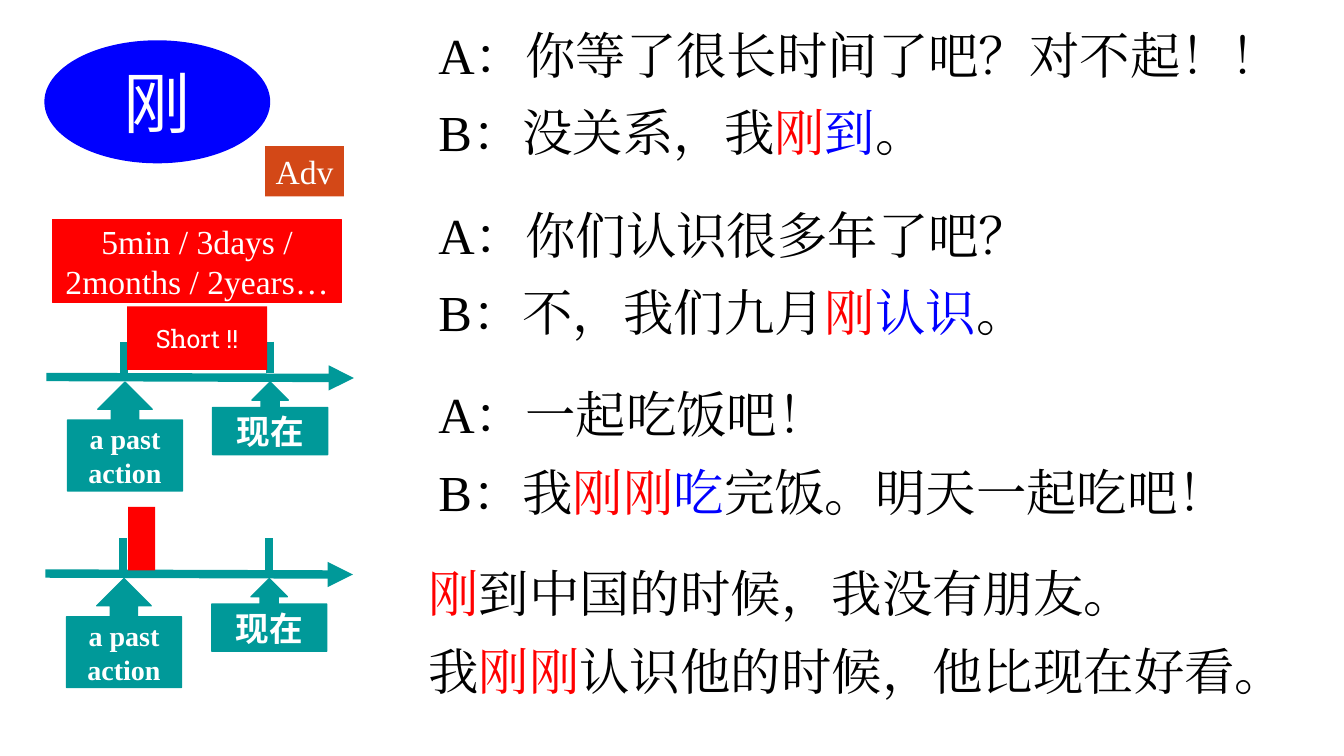
"""Build the grammar slide for the adverb 刚, with its dialogues and timelines."""
import pptx
import pptx.dml.color
import pptx.enum.dml
import pptx.enum.shapes
import pptx.enum.text
import pptx.oxml.ns
import pptx.util
from lxml import etree

Inches = pptx.util.Inches
Pt = pptx.util.Pt
MSO_SHAPE = pptx.enum.shapes.MSO_SHAPE
PP_ALIGN = pptx.enum.text.PP_ALIGN
qn = pptx.oxml.ns.qn

COLORS = {
    "black": "000000",
    "white": "FFFFFF",
    "red": "FF0000",
    "blue": "0000FF",
    "teal": "009999",
    "rust": "D34817",
}
SERIF = "Times New Roman"
HAN = "Noto Sans CJK SC"
SLAB = "Roboto Slab"

DIALOGUES = [
    [("A：你等了很长时间了吧？对不起！！", "black")],
    [("B：没关系，我", "black"), ("刚", "red"), ("到", "blue"), ("。", "black")],
    [("A：你们认识很多年了吧？", "black")],
    [("B：不，我们九月", "black"), ("刚", "red"), ("认识", "blue"), ("。", "black")],
    [("A：一起吃饭吧！", "black")],
    [("B：我", "black"), ("刚刚", "red"), ("吃", "blue"),
     ("完饭。明天一起吃吧！", "black")],
]
EXAMPLES = [
    [("刚", "red"), ("到中国的时候，我没有朋友。", "black")],
    [("我", "black"), ("刚刚", "red"), ("认识他的时候，他比现在好看。", "black")],
]


class GrammarSlide:
    """Hold the slide and its style, and draw each kind of element."""

    def __init__(self, slide):
        self.shapes = slide.shapes

    def color(self, name):
        return pptx.dml.color.RGBColor.from_string(COLORS[name])

    def style_run(self, run, size, font, color, bold=False):
        run.font.size = Pt(size)
        run.font.name = font
        run.font.bold = bold
        run.font.color.rgb = self.color(color)
        east_asian = etree.SubElement(run._r.get_or_add_rPr(), qn("a:ea"))
        east_asian.set("typeface", font)

    def label(self, preset, box, fill, text="", size=24, font=SERIF,
              bold=False, outlined=False):
        label = self.shapes.add_shape(preset, *map(Inches, box))
        label.shadow.inherit = False
        label.fill.solid()
        label.fill.fore_color.rgb = self.color(fill)
        if outlined:
            label.line.color.rgb = self.color(fill)
            label.line.width = Pt(1)
        else:
            label.line.fill.background()
        if text:
            frame = label.text_frame
            frame.text = text
            frame.word_wrap = True
            frame.vertical_anchor = pptx.enum.text.MSO_ANCHOR.MIDDLE
            frame.paragraphs[0].alignment = PP_ALIGN.CENTER
            self.style_run(frame.paragraphs[0].runs[0], size, font, "white", bold)
        return label

    def sentences(self, box, lines):
        frame = self.shapes.add_textbox(*map(Inches, box)).text_frame
        frame.word_wrap = True
        frame.auto_size = pptx.enum.text.MSO_AUTO_SIZE.SHAPE_TO_FIT_TEXT
        for index, line in enumerate(lines):
            paragraph = frame.add_paragraph() if index else frame.paragraphs[0]
            if index:
                paragraph.space_before = Pt(12)
            if line[0][0].startswith("B"):
                paragraph.space_after = Pt(18)
            for text, color in line:
                run = paragraph.add_run()
                run.text = text
                self.style_run(run, 36, SERIF, color)

    def line(self, start, end, arrow=False):
        line = self.shapes.add_connector(
            pptx.enum.shapes.MSO_CONNECTOR.STRAIGHT, *map(Inches, start + end))
        line.line.color.rgb = self.color("teal")
        line.line.width = Pt(6)
        if arrow:
            etree.SubElement(line.line._get_or_add_ln(), qn("a:tailEnd"), type="triangle")
        etree.SubElement(line._element.spPr, qn("a:effectLst"))

    def timeline(self, left, top):
        self.line((left, top), (left + 3.05, top + 0.01), arrow=True)
        for tick in (left + 2.22, left + 0.77):
            self.line((tick, top - 0.35), (tick, top - 0.04))
        callout = MSO_SHAPE.UP_ARROW_CALLOUT
        self.label(callout, (left + 1.65, top + 0.05, 1.14, 0.72), "teal",
                   "现在", 24, HAN, bold=True, outlined=True)
        self.label(callout, (left + 0.21, top + 0.05, 1.14, 1.08), "teal",
                   "a past action", 20, SERIF, bold=True, outlined=True)


def main():
    deck = pptx.Presentation()
    deck.slide_width, deck.slide_height = Inches(13.33), Inches(7.5)
    page = GrammarSlide(deck.slides.add_slide(deck.slide_layouts[6]))

    page.label(MSO_SHAPE.OVAL, (0.44, 0.4, 2.24, 1.22), "blue", "刚", 48, HAN)
    page.sentences((4.25, 0.19, 10.36, 5.08), DIALOGUES)
    page.sentences((4.15, 5.53, 10.36, 1.48), EXAMPLES)

    page.timeline(0.46, 3.74)
    page.label(MSO_SHAPE.RECTANGLE, (1.26, 3.04, 1.39, 0.63), "red",
               "Short !!", 18, SLAB)
    page.label(MSO_SHAPE.RECTANGLE, (0.52, 2.18, 2.87, 0.82), "red",
               "5min / 3days / 2months / 2years…", outlined=True)

    page.timeline(0.45, 5.69)
    page.label(MSO_SHAPE.RECTANGLE, (1.27, 5.03, 0.27, 0.63), "red")

    adverb = page.label(MSO_SHAPE.RECTANGLE, (2.63, 1.45, 0.78, 0.5), "rust", "Adv")
    adverb.text_frame.word_wrap = False
    adverb.text_frame.auto_size = pptx.enum.text.MSO_AUTO_SIZE.SHAPE_TO_FIT_TEXT

    deck.save("out.pptx")


if __name__ == "__main__":
    main()
